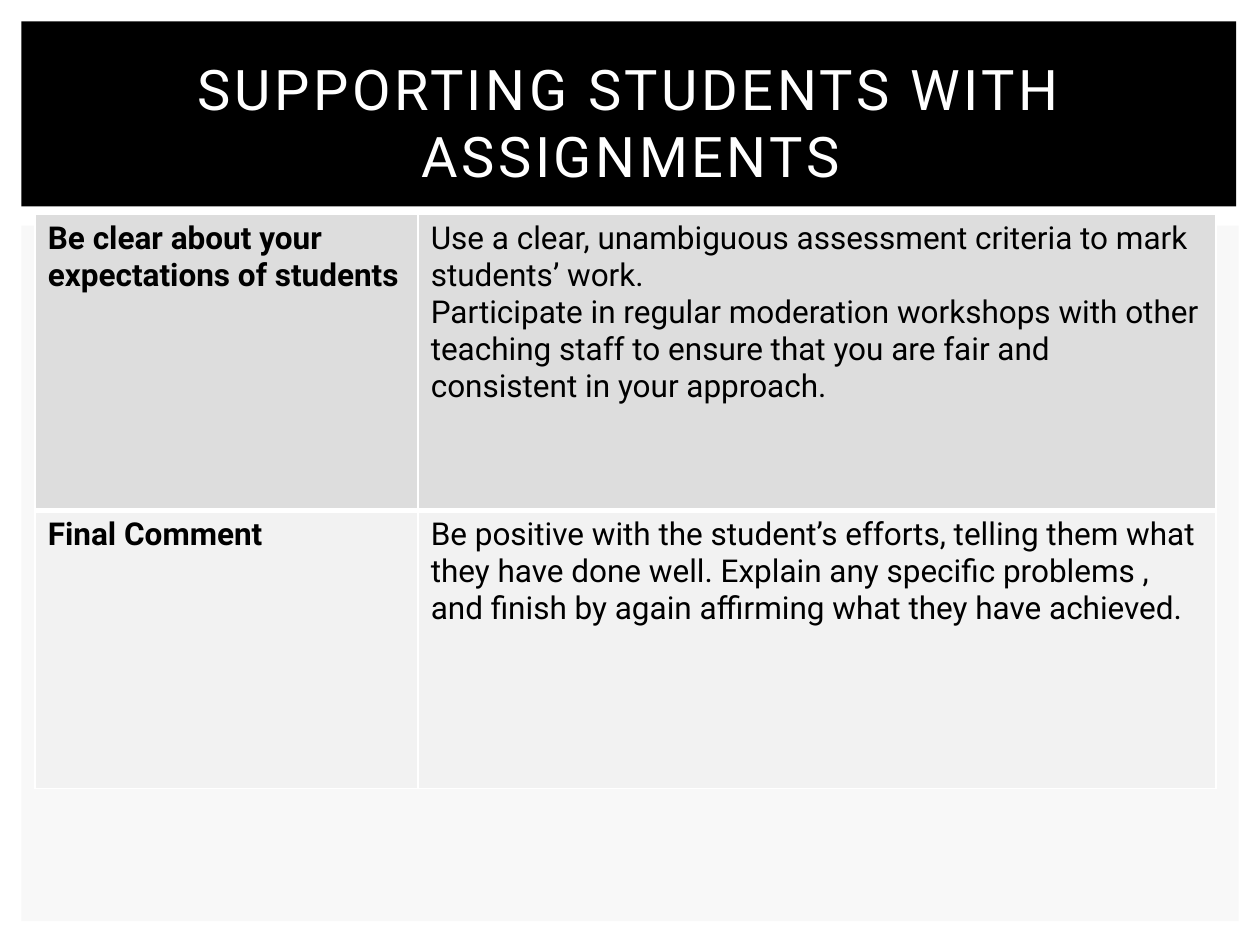
from dataclasses import dataclass

from lxml import etree
from pptx import Presentation
from pptx import util as u
from pptx.dml.color import RGBColor
from pptx.enum import shapes, text
from pptx.oxml import ns

TITLE = "SUPPORTING STUDENTS WITH ASSIGNMENTS"
ROWS = [
    ("Be clear about your expectations of students",
     "Use a clear, unambiguous assessment criteria to mark students’ work.\n"
     "Participate in regular moderation workshops with other teaching staff "
     "to ensure that you are fair and consistent in your approach."),
    ("Final Comment",
     "Be positive with the student’s efforts, telling them what they have done well. "
     "Explain any specific problems , and finish by again affirming what they have achieved."),
]


@dataclass(frozen=True)
class Theme:
    font: str = "Roboto"
    title_size: int = 32
    body_size: int = 18
    title_spacing: int = 200
    white: str = "FFFFFF"
    black: str = "000000"
    panel: str = "F8F8F8"
    row_fills: tuple = ("DDDDDD", "F2F2F2")
    thin: int = 1
    thick: int = 3


THEME = Theme()
PANELS = [
    ((0.43, 4.55, 24.54, 14.02), THEME.panel),
    ((0.43, 0.43, 24.49, 3.73), THEME.black),
]
TITLE_BOX = (1.07, 0.99, 23.29, 2.92)
TABLE_LEFT, TABLE_TOP = 0.71, 4.32
COLUMN_WIDTHS = (7.72, 16.08)
ROW_HEIGHTS = (5.97, 5.61)


def box(lengths):
    return [u.Cm(length) for length in lengths]


def paint(target, color):
    target.fill.solid()
    target.fill.fore_color.rgb = RGBColor.from_string(color)


def style_text(frame, size, color, bold=False):
    for paragraph in frame.paragraphs:
        for run in paragraph.runs:
            run.font.name = THEME.font
            run.font.size = u.Pt(size)
            run.font.bold = bold
            run.font.color.rgb = RGBColor.from_string(color)


def add_borders(cell, widths):
    properties = cell._tc.get_or_add_tcPr()
    for index, (side, width) in enumerate(widths.items()):
        line = etree.Element(ns.qn(f"a:ln{side}"), w=str(u.Pt(width)))
        fill = etree.SubElement(line, ns.qn("a:solidFill"))
        etree.SubElement(fill, ns.qn("a:srgbClr"), val=THEME.white)
        properties.insert(index, line)


def add_panels(slide):
    for lengths, color in PANELS:
        panel = slide.shapes.add_shape(shapes.MSO_SHAPE.RECTANGLE, *box(lengths))
        panel.shadow.inherit = False
        panel.line.fill.background()
        paint(panel, color)


def add_title(slide):
    title = slide.shapes.title
    title.left, title.top, title.width, title.height = box(TITLE_BOX)
    frame = title.text_frame
    frame.text = TITLE
    frame.word_wrap = True
    frame.vertical_anchor = text.MSO_ANCHOR.MIDDLE
    frame.paragraphs[0].alignment = text.PP_ALIGN.CENTER
    style_text(frame, THEME.title_size, THEME.white)
    for run in frame.paragraphs[0].runs:
        run.font._element.set("spc", str(THEME.title_spacing))
    slide.shapes._spTree.append(title._element)


def add_table(slide):
    frame = slide.shapes.add_table(
        len(ROWS), len(COLUMN_WIDTHS),
        *box((TABLE_LEFT, TABLE_TOP, sum(COLUMN_WIDTHS), sum(ROW_HEIGHTS))))
    table = frame.table
    table.first_row = table.horz_banding = False
    for column, width in zip(table.columns, COLUMN_WIDTHS):
        column.width = u.Cm(width)
    for row_index, contents in enumerate(ROWS):
        table.rows[row_index].height = u.Cm(ROW_HEIGHTS[row_index])
        top = THEME.thick if row_index > 0 else THEME.thin
        bottom = THEME.thick if row_index < len(ROWS) - 1 else THEME.thin
        for column_index, content in enumerate(contents):
            cell = table.cell(row_index, column_index)
            cell.text_frame.text = content
            style_text(cell.text_frame, THEME.body_size, THEME.black, column_index == 0)
            paint(cell, THEME.row_fills[row_index])
            add_borders(cell, {"L": THEME.thin, "R": THEME.thin, "T": top, "B": bottom})


def main():
    presentation = Presentation()
    presentation.slide_width, presentation.slide_height = box((25.4, 19.05))
    slide = presentation.slides.add_slide(presentation.slide_layouts[5])
    paint(slide.background, THEME.white)
    add_panels(slide)
    add_title(slide)
    add_table(slide)
    presentation.save("out.pptx")


if __name__ == "__main__":
    main()
